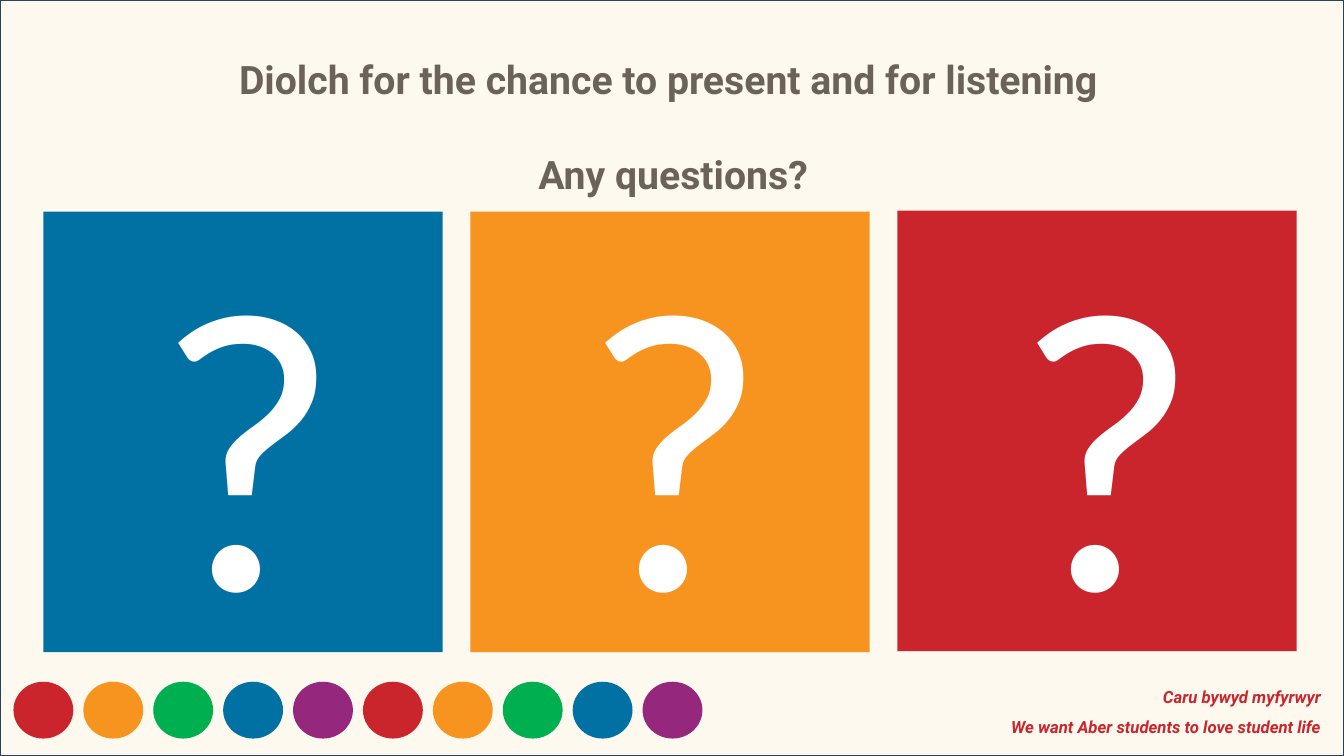
import pptx
import pptx.util
import pptx.dml.color
import pptx.enum.shapes
import pptx.enum.text
import pptx.oxml.ns
from lxml import etree

Inch = pptx.util.Inches
Kind = pptx.enum.shapes.MSO_SHAPE
Align = pptx.enum.text.PP_ALIGN
Fit = pptx.enum.text.MSO_AUTO_SIZE
RED, GOLD, GREEN, BLUE, PLUM = "CA252C", "F7941F", "00AF50", "0171A3", "95277D"


def paint(part, code):
    part.solid()
    part.fore_color.rgb = pptx.dml.color.RGBColor.from_string(code)


def write(para, text, size, face, code, bold=False, slant=False):
    run = para.add_run()
    run.text = text
    run.font.size = pptx.util.Pt(size)
    run.font.name = face
    run.font.bold = bold
    run.font.italic = slant
    paint(run.font.fill, code)


deck = pptx.Presentation()
deck.slide_width = Inch(13.33)
deck.slide_height = Inch(7.5)
slide = deck.slides.add_slide(deck.slide_layouts[5])
shapes = slide.shapes

back = shapes.add_shape(Kind.RECTANGLE, 0, 0, deck.slide_width, deck.slide_height)
back.shadow.inherit = False
paint(back.fill, "FEEECE")
tint = back.fill._xPr.find(".//" + pptx.oxml.ns.qn("a:srgbClr"))
etree.SubElement(tint, pptx.oxml.ns.qn("a:alpha"), val="33000")
paint(back.line.fill, "28445D")
back.line.width = pptx.util.Pt(2)

motto = shapes.add_textbox(Inch(6.67), Inch(6.66), Inch(6.53), Inch(0.67)).text_frame
motto.word_wrap = True
for row, text in enumerate(["Caru bywyd myfyrwyr", "We want Aber students to love student life"]):
    para = motto.add_paragraph() if row else motto.paragraphs[0]
    para.alignment = Align.RIGHT
    para.line_spacing = 1.5
    write(para, text, 12, "Roboto", RED, True, True)

for col, code in enumerate([RED, GOLD, GREEN, BLUE, PLUM] * 2):
    dot = shapes.add_shape(Kind.OVAL, Inch(0.14 + col * 6.24 / 9), Inch(6.77), Inch(0.58), Inch(0.55))
    dot.shadow.inherit = False
    paint(dot.fill, code)
    paint(dot.line.fill, code)
    dot.line.width = pptx.util.Pt(1)

title = shapes.title
title.left, title.top, title.width, title.height = map(Inch, (0.55, 0.5, 12.25, 1.51))
head = title.text_frame
head.word_wrap = True
head.auto_size = Fit.NONE
head.vertical_anchor = pptx.enum.text.MSO_ANCHOR.TOP
for row, text in enumerate(["Diolch for the chance to present and for listening ", "Any questions?"]):
    para = head.add_paragraph() if row else head.paragraphs[0]
    para.alignment = Align.CENTER
    para.space_before = pptx.util.Pt(34 * row)
    write(para, text, 28, "Roboto", "242021", True)

panels = [(BLUE, 2.1, 1.43), (GOLD, 2.1, 5.67), (RED, 2.09, 9.95)]
for col, (code, top, left) in enumerate(panels):
    card = shapes.add_shape(Kind.RECTANGLE, Inch(0.43 + col * 8.47 / 2), Inch(top), Inch(3.96), Inch(4.37))
    card.shadow.inherit = False
    paint(card.fill, code)
    card.line.fill.background()
    mark = shapes.add_textbox(Inch(left), Inch(1.82), Inch(1.95), Inch(4.93)).text_frame
    mark.word_wrap = True
    write(mark.paragraphs[0], "?", 287, "Calibri", "FFFFFF")

deck.save("out.pptx")
